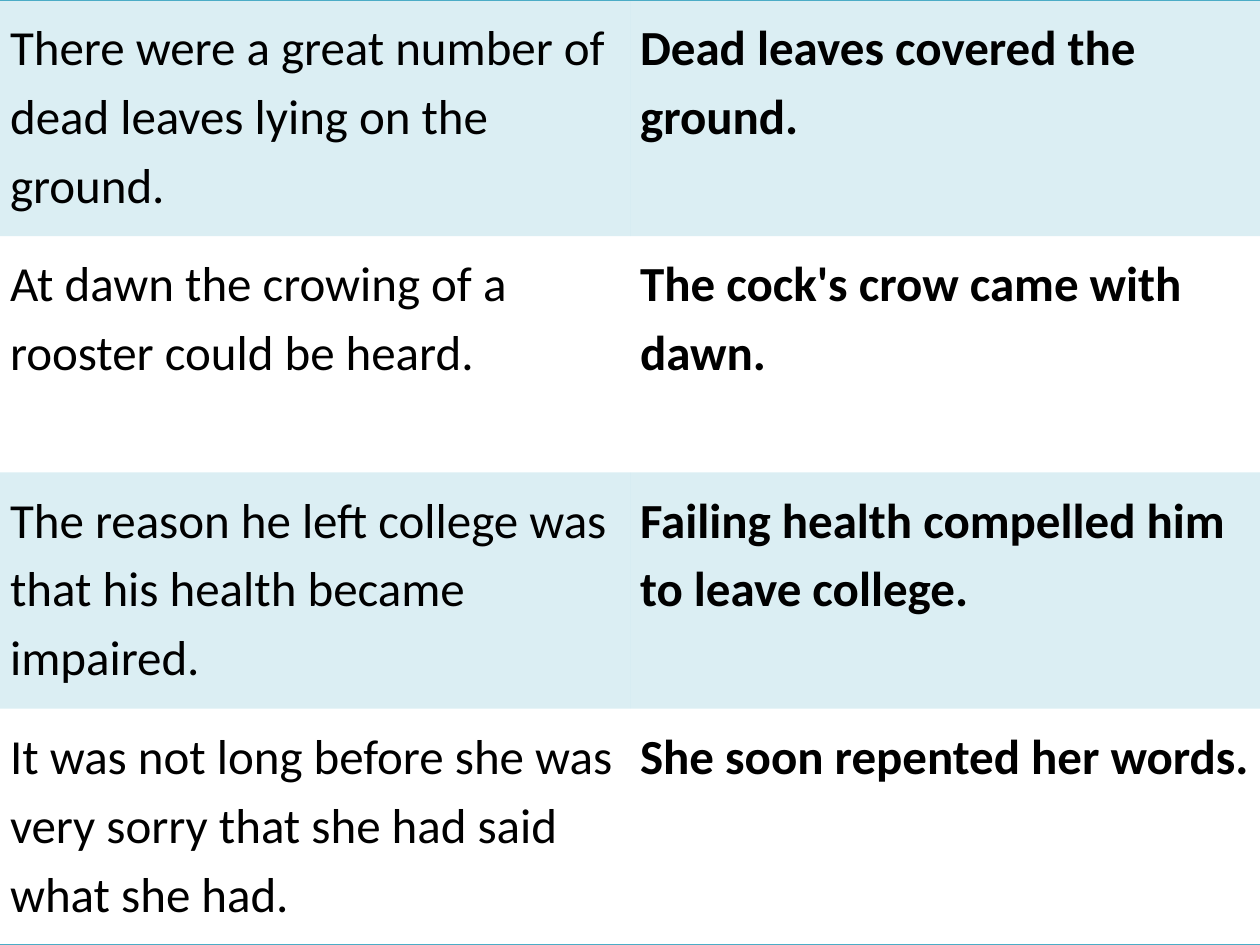
from lxml.etree import SubElement as Sub
from pptx import Presentation
from pptx.dml.color import RGBColor as Rgb
from pptx.oxml.ns import qn
from pptx.util import Inches, Pt

HUES = {"text": "000000", "teal": "4BACC6"}
PLAIN = "{2D5ABB26-0587-4C30-8999-92F81FD0307C}"
PAIRS = [
    ("There were a great number of dead leaves lying on the ground.",
     "Dead leaves covered the ground."),
    ("At dawn the crowing of a rooster could be heard.",
     "The cock's crow came with dawn."),
    ("The reason he left college was that his health became impaired.",
     "Failing health compelled him to leave college."),
    ("It was not long before she was very sorry that she had said what she had.",
     "She soon repented her words."),
]


def add_grid(slide, rows, cols, wide, high):
    frame = slide.shapes.add_table(rows, cols, 0, 0, wide, high)
    grid = frame.table
    grid.first_row = False
    grid.horz_banding = False
    grid._tbl.tblPr.find(qn("a:tableStyleId")).text = PLAIN
    return grid


def write(cell, text, bold):
    cell.margin_left = cell.margin_right = Inches(0.08)
    cell.margin_top = cell.margin_bottom = Inches(0.08)
    para = cell.text_frame.paragraphs[0]
    para.line_spacing = 1.15
    run = para.add_run()
    run.text = text
    font = run.font
    font.name = "Calibri"
    font.size = Pt(28)
    font.bold = bold
    font.color.rgb = Rgb.from_string(HUES["text"])


def rule(cell, side):
    line = Sub(cell._tc.get_or_add_tcPr(), qn(f"a:{side}"), w=str(Pt(1)))
    fill = Sub(line, qn("a:solidFill"))
    Sub(fill, qn("a:srgbClr"), val=HUES["teal"])


def tint(cell, shaded):
    if not shaded:
        cell.fill.background()
        return
    cell.fill.solid()
    cell.fill.fore_color.rgb = Rgb.from_string(HUES["teal"])
    hue = cell._tc.tcPr.find(qn("a:solidFill")).find(qn("a:srgbClr"))
    Sub(hue, qn("a:alpha"), val="20000")


def main():
    deck = Presentation()
    deck.slide_width = Inches(10)
    deck.slide_height = Inches(7.5)
    slide = deck.slides.add_slide(deck.slide_layouts[6])
    grid = add_grid(slide, len(PAIRS), 2, deck.slide_width, deck.slide_height)
    for row, pair in enumerate(PAIRS):
        for col, text in enumerate(pair):
            cell = grid.cell(row, col)
            write(cell, text, col == 1)
            if row == 0:
                rule(cell, "lnT")
            if row == len(PAIRS) - 1:
                rule(cell, "lnB")
            tint(cell, row % 2 == 0)
    deck.save("out.pptx")


if __name__ == "__main__":
    main()
